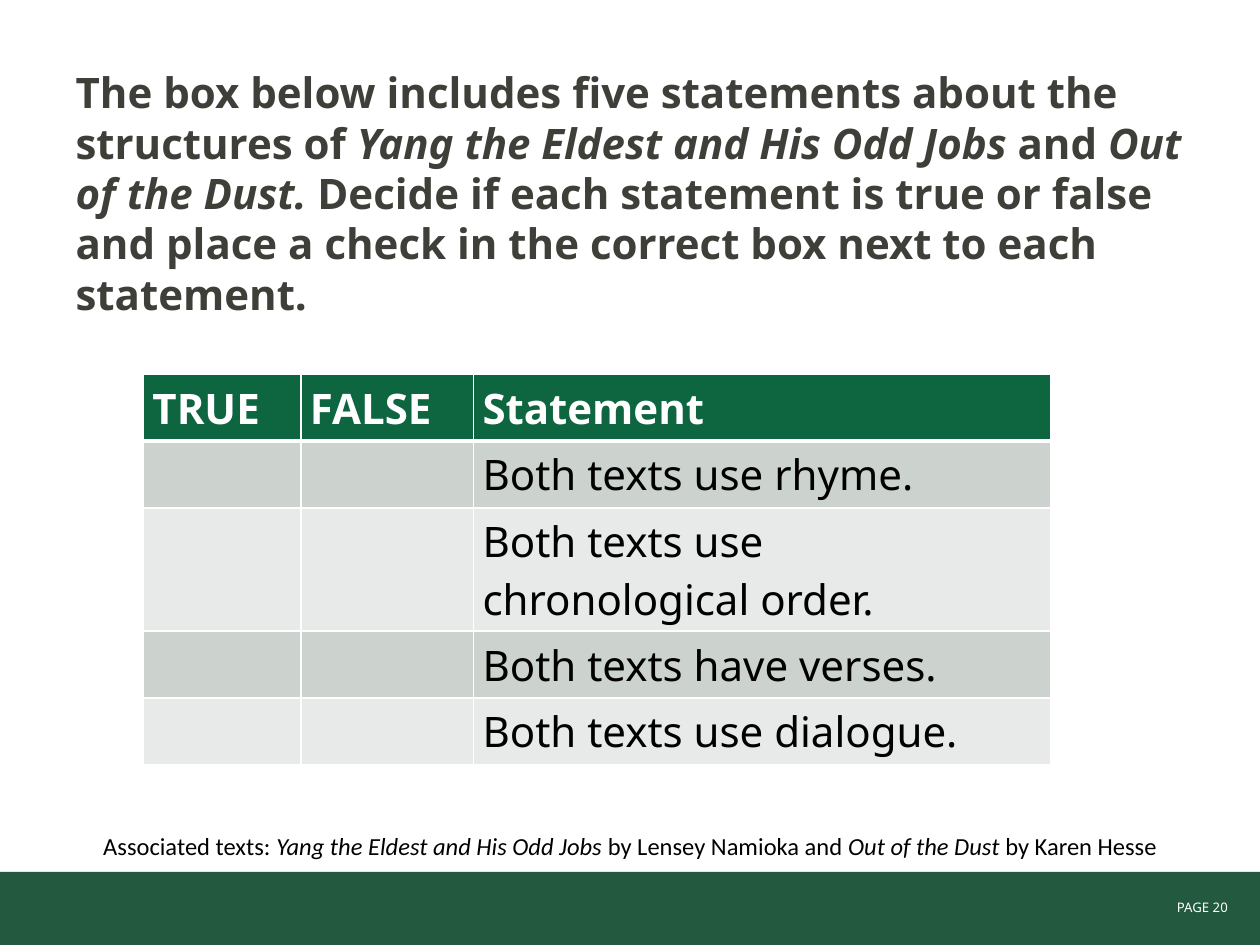
from lxml import etree
from pptx import Presentation
from pptx.dml.color import RGBColor
from pptx.enum.shapes import MSO_SHAPE
from pptx.enum.text import MSO_ANCHOR, PP_ALIGN
from pptx.oxml.ns import qn
from pptx.util import Inches, Pt

RECTANGLE = MSO_SHAPE.RECTANGLE
TOP = MSO_ANCHOR.TOP
LEFT, CENTER, RIGHT = PP_ALIGN.LEFT, PP_ALIGN.CENTER, PP_ALIGN.RIGHT

WHITE, BLACK, GREY = "FFFFFF", "000000", "3F3F39"
BAR_GREEN, HEADER_GREEN = "23593E", "0E6641"
BANDS = ("CCD3CF", "E7EAE9")
YANG = "Yang the Eldest and His Odd Jobs"
DUST = "Out of the Dust "
COLUMN_WIDTHS = (1.25, 1.37, 4.58)
ROW_HEIGHTS = (0.53, 0.53, 0.98, 0.53, 0.53)
STATEMENTS = (
    "Both texts use rhyme.",
    "Both texts use chronological order.",
    "Both texts have verses.",
    "Both texts use dialogue.",
)


def color(value):
    """Return the colour for a hex string."""
    return RGBColor.from_string(value)


def write(para, *parts, font="Noto Sans", size=24, fill=BLACK, bold=False, align=LEFT):
    """Add parts to a paragraph, every second one in italics."""
    para.alignment = align
    for index, part in enumerate(parts):
        span = para.add_run()
        span.text = part
        span.font.name = font
        span.font.size = Pt(size)
        span.font.bold = bold
        span.font.italic = index % 2 == 1
        span.font.color.rgb = color(fill)


def add_text(page, box, *parts, **text_format):
    """Add a wrapping text box with one paragraph."""
    frame = page.shapes.add_textbox(*map(Inches, box)).text_frame
    frame.word_wrap = True
    write(frame.paragraphs[0], *parts, **text_format)


def add_footer(page, box):
    """Add the green footer bar with the page number at its right."""
    left, top, width, height = box
    bar = page.shapes.add_shape(RECTANGLE, *map(Inches, box))
    bar.shadow.inherit = False
    bar.fill.solid()
    bar.fill.fore_color.rgb = color(BAR_GREEN)
    bar.line.fill.background()
    add_text(page, (left + width - 1.73, top + 0.17, 1.59, 0.23), "PAGE 20 ",
             size=7.5, fill=WHITE, align=RIGHT)


def add_instructions(page, box):
    """Place the instructions in the body placeholder."""
    body = page.placeholders[1]
    body.left, body.top, body.width, body.height = map(Inches, box)
    body.text_frame.vertical_anchor = TOP
    para = body.text_frame.paragraphs[0]
    properties = para._p.get_or_add_pPr()
    properties.set("marL", "0")
    properties.set("indent", "0")
    etree.SubElement(properties, qn("a:buNone"))
    para.space_before = Pt(0)
    write(para, "The box below includes five statements about the structures of ",
          YANG, " and ", "Out of the Dust. ",
          "Decide if each statement is true or false and place a check "
          "in the correct box next to each statement.", fill=GREY, bold=True)


def set_borders(cell, bottom):
    """Draw white borders around a cell."""
    properties = cell._tc.get_or_add_tcPr()
    widths = {"lnL": 1, "lnR": 1, "lnT": 1, "lnB": bottom}
    for index, (side, width) in enumerate(widths.items()):
        line = etree.Element(qn(f"a:{side}"), w=str(Pt(width)))
        fill = etree.SubElement(line, qn("a:solidFill"))
        etree.SubElement(fill, qn("a:srgbClr"), val=WHITE)
        properties.insert(index, line)


def add_checklist(page, box):
    """Add the table of statements to mark as true or false."""
    rows = [("TRUE", "FALSE", "Statement")]
    rows += [("", "", statement) for statement in STATEMENTS]
    table = page.shapes.add_table(len(rows), 3, *map(Inches, box)).table
    for column, width in zip(table.columns, COLUMN_WIDTHS):
        column.width = Inches(width)
    for row_index, texts in enumerate(rows):
        header = row_index == 0
        table.rows[row_index].height = Inches(ROW_HEIGHTS[row_index])
        for column_index, text in enumerate(texts):
            cell = table.cell(row_index, column_index)
            cell.margin_left, cell.margin_right = Inches(0.07), Inches(0.1)
            cell.margin_top = cell.margin_bottom = Inches(0.04)
            cell.fill.solid()
            cell.fill.fore_color.rgb = color(
                HEADER_GREEN if header else BANDS[(row_index - 1) % 2])
            set_borders(cell, bottom=3 if header else 1)
            if text:
                write(cell.text_frame.paragraphs[0], text, bold=header,
                      fill=WHITE if header else BLACK)


def main():
    """Build the deck and save it."""
    deck = Presentation()
    deck.slide_width, deck.slide_height = Inches(10), Inches(7.5)
    page = deck.slides.add_slide(deck.slide_layouts[1])
    title = page.shapes.title.element
    title.getparent().remove(title)
    add_footer(page, (0, 6.92, 10.01, 0.59))
    add_instructions(page, (0.5, 0.48, 9, 5.81))
    add_checklist(page, (1.14, 2.97, sum(COLUMN_WIDTHS), sum(ROW_HEIGHTS)))
    add_text(page, (0.61, 6.55, 8.78, 0.34), "Associated texts: ", YANG,
             " by Lensey Namioka and ", DUST, "by Karen Hesse",
             font="Calibri", size=14, align=CENTER)
    deck.save("out.pptx")


if __name__ == "__main__":
    main()
